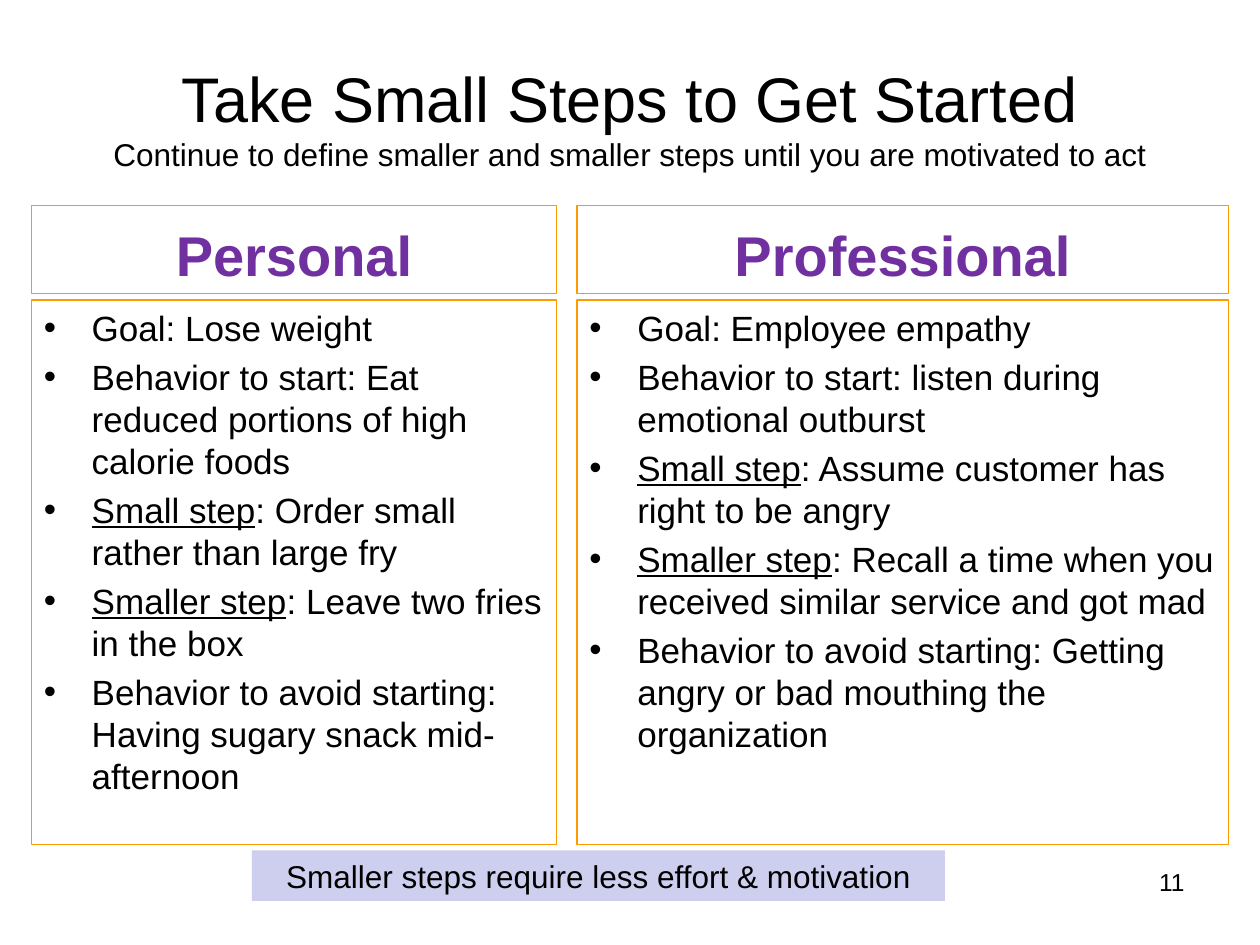
from pptx import Presentation
from pptx.dml.color import RGBColor
from pptx.enum.shapes import MSO_SHAPE
from pptx.enum.text import MSO_ANCHOR, MSO_AUTO_SIZE, PP_ALIGN
from pptx.oxml.ns import qn
from pptx.util import Inches, Pt
from lxml import etree

RECT = MSO_SHAPE.RECTANGLE
TOP, MID, LOW = MSO_ANCHOR.TOP, MSO_ANCHOR.MIDDLE, MSO_ANCHOR.BOTTOM
LEFT, MIDST, RIGHT = PP_ALIGN.LEFT, PP_ALIGN.CENTER, PP_ALIGN.RIGHT
FIXED = MSO_AUTO_SIZE.NONE

BLACK = RGBColor(0x00, 0x00, 0x00)
PURPLE = RGBColor(0x70, 0x30, 0xA0)
ORANGE = RGBColor(0xFF, 0x99, 0x00)
LILAC = RGBColor(0xCE, 0xCE, 0xEF)

HEAD = {"size": Pt(36)}
SUB = {"size": Pt(18)}
NAME = {"size": Pt(32), "bold": True}
ITEM = {"size": Pt(20)}
STEP = {"size": Pt(20), "underline": True}
PAGE = {"size": Pt(14)}

COLUMNS = [
    (0.25, 4.17, "Personal", [
        ("", "Goal: Lose weight"),
        ("", "Behavior to start: Eat reduced portions of high calorie foods"),
        ("Small step", ": Order small rather than large fry"),
        ("Smaller step", ": Leave two fries in the box"),
        ("", "Behavior to avoid starting: Having sugary snack mid-afternoon"),
    ]),
    (4.58, 5.17, "Professional", [
        ("", "Goal: Employee empathy"),
        ("", "Behavior to start: listen during emotional outburst"),
        ("Small step", ": Assume customer has right to be angry"),
        ("Smaller step", ": Recall a time when you received similar service and got mad"),
        ("", "Behavior to avoid starting: Getting angry or bad mouthing the organization"),
    ]),
]


def add_run(para, text, style, color=BLACK):
    """Add one run of text in the given style."""
    run = para.add_run()
    run.text = text
    for key, value in {"name": "Arial", **style}.items():
        setattr(run.font, key, value)
    run.font.color.rgb = color


def set_frame(shape, anchor):
    """Wrap and anchor the text of a shape and return its frame."""
    frame = shape.text_frame
    values = {"word_wrap": True, "auto_size": FIXED, "vertical_anchor": anchor}
    for key, value in values.items():
        setattr(frame, key, value)
    return frame


def add_box(slide, place, anchor, fill=None, line=None):
    """Add a rectangle and return its text frame."""
    box = slide.shapes.add_shape(RECT, *map(Inches, place))
    box.shadow.inherit = False
    if fill is None:
        box.fill.background()
    else:
        box.fill.solid()
        box.fill.fore_color.rgb = fill
    if line is None:
        box.line.fill.background()
    else:
        box.line.color.rgb = line
        box.line.width = Pt(0.75)
    return set_frame(box, anchor)


def add_label(frame, text, style, align=MIDST, color=BLACK):
    """Write a single line into a frame."""
    para = frame.paragraphs[0]
    para.alignment = align
    add_run(para, text, style, color)


def add_bullet(para):
    """Give a paragraph a bullet with a hanging indent."""
    props = para._p.get_or_add_pPr()
    props.set("marL", str(Inches(0.38)))
    props.set("indent", str(-Inches(0.38)))
    font = etree.SubElement(props, qn("a:buFont"))
    font.set("typeface", "Arial")
    etree.SubElement(props, qn("a:buChar")).set("char", "•")


def add_list(frame, items):
    """Fill a frame with bullets whose lead words are underlined."""
    for num, (lead, rest) in enumerate(items):
        para = frame.add_paragraph() if num else frame.paragraphs[0]
        values = {"alignment": LEFT, "space_before": Pt(4), "line_spacing": Pt(24)}
        for key, value in values.items():
            setattr(para, key, value)
        add_bullet(para)
        if lead:
            add_run(para, lead, STEP)
        add_run(para, rest, ITEM)


def add_title(slide):
    """Place the title and its smaller second line."""
    title = slide.shapes.title
    place = {"left": 0.5, "top": 0.3, "width": 9, "height": 1.25}
    for key, value in place.items():
        setattr(title, key, Inches(value))
    para = set_frame(title, MID).paragraphs[0]
    para.alignment = MIDST
    add_run(para, "Take Small Steps to Get Started", HEAD)
    para.add_line_break()
    add_run(para, "Continue to define smaller and smaller steps until you are motivated to act", SUB)


def add_column(slide, left, width, name, items):
    """Add a headed column of bullets."""
    head = add_box(slide, (left, 1.63, width, 0.7), LOW, line=ORANGE)
    add_label(head, name, NAME, color=PURPLE)
    body = add_box(slide, (left, 2.38, width, 4.32), TOP, line=ORANGE)
    add_list(body, items)


def main():
    """Build the slide and save it."""
    deck = Presentation()
    deck.slide_width, deck.slide_height = Inches(10), Inches(7.5)
    slide = deck.slides.add_slide(deck.slide_layouts[5])
    add_title(slide)
    for column in COLUMNS:
        add_column(slide, *column)
    page = slide.shapes.add_textbox(*map(Inches, (7.17, 6.83, 2.33, 0.52)))
    add_label(set_frame(page, TOP), "11", PAGE, RIGHT)
    note = add_box(slide, (2, 6.75, 5.5, 0.4), TOP, fill=LILAC)
    add_label(note, "Smaller steps require less effort & motivation", SUB)
    deck.save("out.pptx")


if __name__ == "__main__":
    main()
